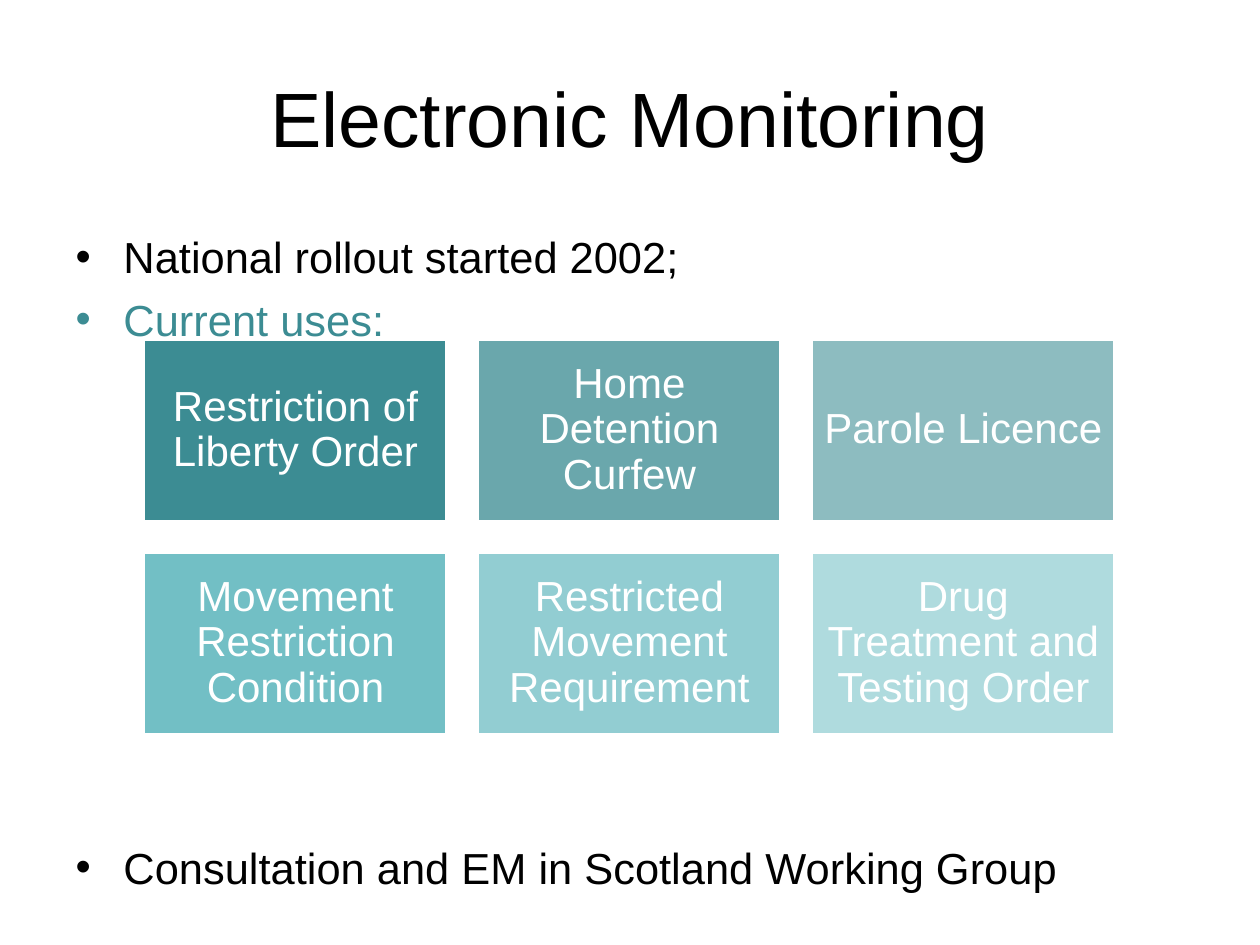
from lxml.etree import SubElement
from pptx import Presentation
from pptx.dml.color import RGBColor
from pptx.enum.shapes import MSO_SHAPE as Shape
from pptx.enum.text import MSO_ANCHOR as Anchor, MSO_AUTO_SIZE as AutoSize, PP_ALIGN as Align
from pptx.oxml.ns import qn
from pptx.util import Inches, Pt

BLACK = RGBColor(0x00, 0x00, 0x00)
WHITE = RGBColor(0xFF, 0xFF, 0xFF)
DARK_TEAL = RGBColor(0x3C, 0x8C, 0x93)
LIGHT_TEAL = RGBColor(0x72, 0xBF, 0xC5)

BULLETS = [  # text, colour, space before in points
    ("National rollout started 2002;", BLACK, 0),
    ("Current uses:", DARK_TEAL, 5.7),
    ("Consultation and EM in Scotland Working Group", BLACK, 283.5),
]
USES = [  # row colour, then each use with its opacity in percent
    (DARK_TEAL, [("Restriction of Liberty Order", 100),
                 ("Home Detention Curfew", 76),
                 ("Parole Licence", 58)]),
    (LIGHT_TEAL, [("Movement Restriction Condition", 100),
                  ("Restricted Movement Requirement", 77),
                  ("Drug Treatment and Testing Order", 56)]),
]


def write(para, text, font="Arial", size=24, color=BLACK, align=Align.LEFT,
          before=0, spacing=1.0):
    para.alignment = align
    para.space_before = Pt(before)
    para.line_spacing = spacing
    span = para.add_run()
    span.text = text
    span.font.name = font
    span.font.size = Pt(size)
    span.font.color.rgb = color


def place(box, left, top, width, height):
    box.left, box.top = Inches(left), Inches(top)
    box.width, box.height = Inches(width), Inches(height)


def add_bullet(para, indent):
    props = para._p.get_or_add_pPr()
    props.set("marL", str(Inches(indent)))
    props.set("indent", str(-Inches(indent)))
    SubElement(props, qn("a:buFont"), typeface="Arial")
    SubElement(props, qn("a:buChar"), char="•")


class SlideBuilder:
    title_size = 44
    list_size = 24.8
    box_size = 24
    box_inset = Inches(0.09)

    def __init__(self, deck):
        self.page = deck.slides.add_slide(deck.slide_layouts[1])

    def title(self, text):
        box = self.page.shapes.title
        place(box, 0.5, 0.3, 9, 1.25)
        box.text_frame.vertical_anchor = Anchor.MIDDLE
        write(box.text_frame.paragraphs[0], text, size=self.title_size, align=Align.CENTER)

    def bullets(self, items):
        box = self.page.placeholders[1]
        place(box, 0.5, 1.78, 9, 4.95)
        frame = box.text_frame
        frame.auto_size = AutoSize.NONE
        for index, (text, color, before) in enumerate(items):
            para = frame.add_paragraph() if index else frame.paragraphs[0]
            add_bullet(para, 0.38)
            write(para, text, size=self.list_size, color=color, before=before)

    def tile(self, text, left, top, width, height, color, opacity):
        box = self.page.shapes.add_shape(
            Shape.RECTANGLE, Inches(left), Inches(top), Inches(width), Inches(height))
        box.shadow.inherit = False
        box.fill.solid()
        box.fill.fore_color.rgb = color
        if opacity < 100:
            tint = box._element.spPr.find(qn("a:solidFill"))[0]
            SubElement(tint, qn("a:alpha"), val=str(opacity * 1000))
        box.line.color.rgb = WHITE
        box.line.width = Pt(2)
        frame = box.text_frame
        frame.word_wrap = True
        frame.vertical_anchor = Anchor.MIDDLE
        frame.margin_left = frame.margin_right = self.box_inset
        frame.margin_top = frame.margin_bottom = self.box_inset
        write(frame.paragraphs[0], text, size=self.box_size, color=WHITE,
              align=Align.CENTER, spacing=0.9)

    def tile_grid(self, rows, left=1.14, top=2.69, width=2.41, height=1.45, gap=0.24):
        for row, (color, uses) in enumerate(rows):
            for column, (text, opacity) in enumerate(uses):
                self.tile(text, left + column * (width + gap), top + row * (height + gap),
                          width, height, color, opacity)


def main():
    deck = Presentation()
    deck.slide_width, deck.slide_height = Inches(10), Inches(7.5)
    slide = SlideBuilder(deck)
    slide.title("Electronic Monitoring")
    slide.bullets(BULLETS)
    slide.tile_grid(USES)
    deck.save("out.pptx")


if __name__ == "__main__":
    main()
